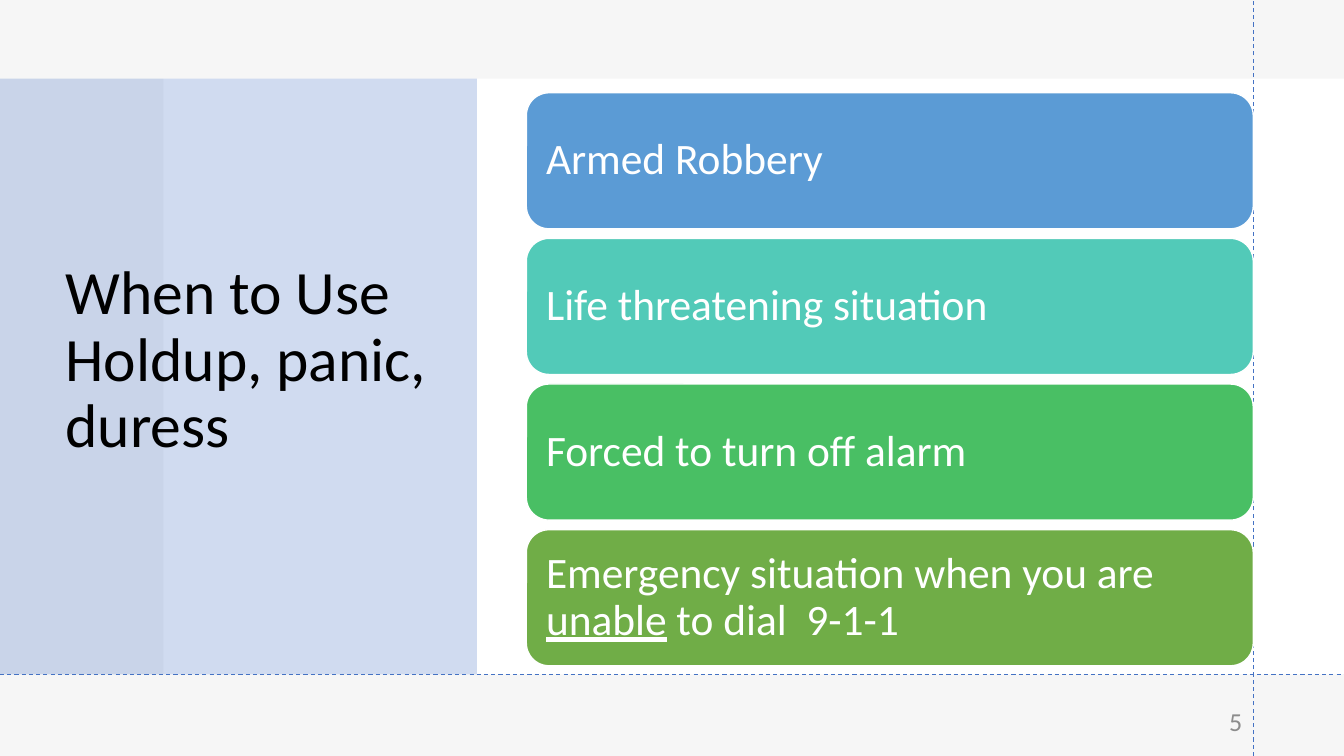
from lxml.etree import SubElement
from pptx import Presentation
from pptx.dml.color import RGBColor
from pptx.enum.dml import MSO_LINE
from pptx.enum.shapes import MSO_CONNECTOR, MSO_SHAPE
from pptx.enum.text import MSO_ANCHOR, PP_ALIGN
from pptx.oxml.ns import qn
from pptx.util import Inches, Pt

WHITE = RGBColor(0xFF, 0xFF, 0xFF)
BLACK = RGBColor(0x00, 0x00, 0x00)
GRAY = RGBColor(0x8C, 0x8C, 0x8C)
BACKDROP = RGBColor(0xF6, 0xF6, 0xF6)
BLUE = RGBColor(0x44, 0x72, 0xC4)
SKY = RGBColor(0x5B, 0x9B, 0xD5)
TEAL = RGBColor(0x52, 0xCA, 0xB8)
GREEN = RGBColor(0x49, 0xBF, 0x64)
OLIVE = RGBColor(0x70, 0xAD, 0x47)
FONT = "Calibri"

# Content: each situation is a colour and its (text, underlined) runs
TITLE_LINES = ["When to Use", "Holdup, panic, duress"]
SITUATIONS = [
    (SKY, [("Armed Robbery", False)]),
    (TEAL, [("Life threatening situation", False)]),
    (GREEN, [("Forced to turn off alarm", False)]),
    (OLIVE, [("Emergency situation when you are ", False),
             ("unable", True),
             (" to dial  9-1-1", False)]),
]
PAGE_NUMBER = "5"

# Layout in inches
SLIDE_W, SLIDE_H = 13.33, 7.5
BAND_LEFT, BAND_TOP, BAND_BOTTOM = 1.62, 0.78, 6.69
PANEL_W = 4.73
GUIDE_X = 12.43
BAR_LEFT, BAR_TOP, BAR_H, BAR_PITCH = 5.22, 0.92, 1.35, 1.445
GUIDES = [(GUIDE_X, SLIDE_H, GUIDE_X, 0), (0, BAND_BOTTOM, SLIDE_W, BAND_BOTTOM)]


def add_block(slide, preset, box, color):
    block = slide.shapes.add_shape(preset, *map(Inches, box))
    block.shadow.inherit = False
    block.fill.solid()
    block.fill.fore_color.rgb = color
    block.line.fill.background()
    return block


def add_guide(slide, ends):
    guide = slide.shapes.add_connector(MSO_CONNECTOR.STRAIGHT, *map(Inches, ends))
    guide.line.color.rgb = BLUE
    guide.line.width = Pt(0.75)
    guide.line.dash_style = MSO_LINE.DASH
    SubElement(guide._element.spPr, qn("a:effectLst"))


def prepare_text(frame, align, spacing=1.0):
    frame.word_wrap = True
    frame.vertical_anchor = MSO_ANCHOR.MIDDLE
    paragraph = frame.paragraphs[0]
    paragraph.alignment = align
    paragraph.line_spacing = spacing
    return paragraph


def add_run(paragraph, text, size, color, underlined=False):
    run = paragraph.add_run()
    run.text = text
    run.font.name = FONT
    run.font.size = Pt(size)
    run.font.color.rgb = color
    if underlined:
        run.font.underline = True


def main():
    deck = Presentation()
    deck.slide_width, deck.slide_height = Inches(SLIDE_W), Inches(SLIDE_H)
    slide = deck.slides.add_slide(deck.slide_layouts[6])
    slide.background.fill.solid()
    slide.background.fill.fore_color.rgb = BACKDROP

    # White band and translucent title panel
    band_h = BAND_BOTTOM - BAND_TOP
    add_block(slide, MSO_SHAPE.RECTANGLE,
              (BAND_LEFT, BAND_TOP, SLIDE_W - BAND_LEFT, band_h), WHITE)
    panel = add_block(slide, MSO_SHAPE.RECTANGLE, (0, BAND_TOP, PANEL_W, band_h), BLUE)
    panel_color = panel._element.spPr.find(qn("a:solidFill"))[0]
    SubElement(panel_color, qn("a:alpha"), val="25000")

    # Title
    title = slide.shapes.add_textbox(*map(Inches, (0.55, 0.74, 3.95, 5.69)))
    heading = prepare_text(title.text_frame, PP_ALIGN.LEFT, 0.9)
    for index, line in enumerate(TITLE_LINES):
        if index:
            heading.add_line_break()
        add_run(heading, line, 44, BLACK)

    # Dashed guides
    for ends in GUIDES:
        add_guide(slide, ends)

    # Situation bars
    for index, (color, runs) in enumerate(SITUATIONS):
        box = (BAR_LEFT, BAR_TOP + index * BAR_PITCH, GUIDE_X - BAR_LEFT, BAR_H)
        bar = add_block(slide, MSO_SHAPE.ROUNDED_RECTANGLE, box, color)
        bar.line.color.rgb = WHITE
        bar.line.width = Pt(1)
        frame = bar.text_frame
        # The rounded corners already inset the text by about 0.07 inch
        frame.margin_left = frame.margin_right = Inches(0.13)
        situation = prepare_text(frame, PP_ALIGN.LEFT, 0.9)
        for text, underlined in runs:
            add_run(situation, text, 31, WHITE, underlined)

    # Page number
    footer = slide.shapes.add_textbox(*map(Inches, (9.42, 6.95, 3, 0.4)))
    number = prepare_text(footer.text_frame, PP_ALIGN.RIGHT)
    add_run(number, PAGE_NUMBER, 18.5, GRAY)

    deck.save("out.pptx")


if __name__ == "__main__":
    main()
